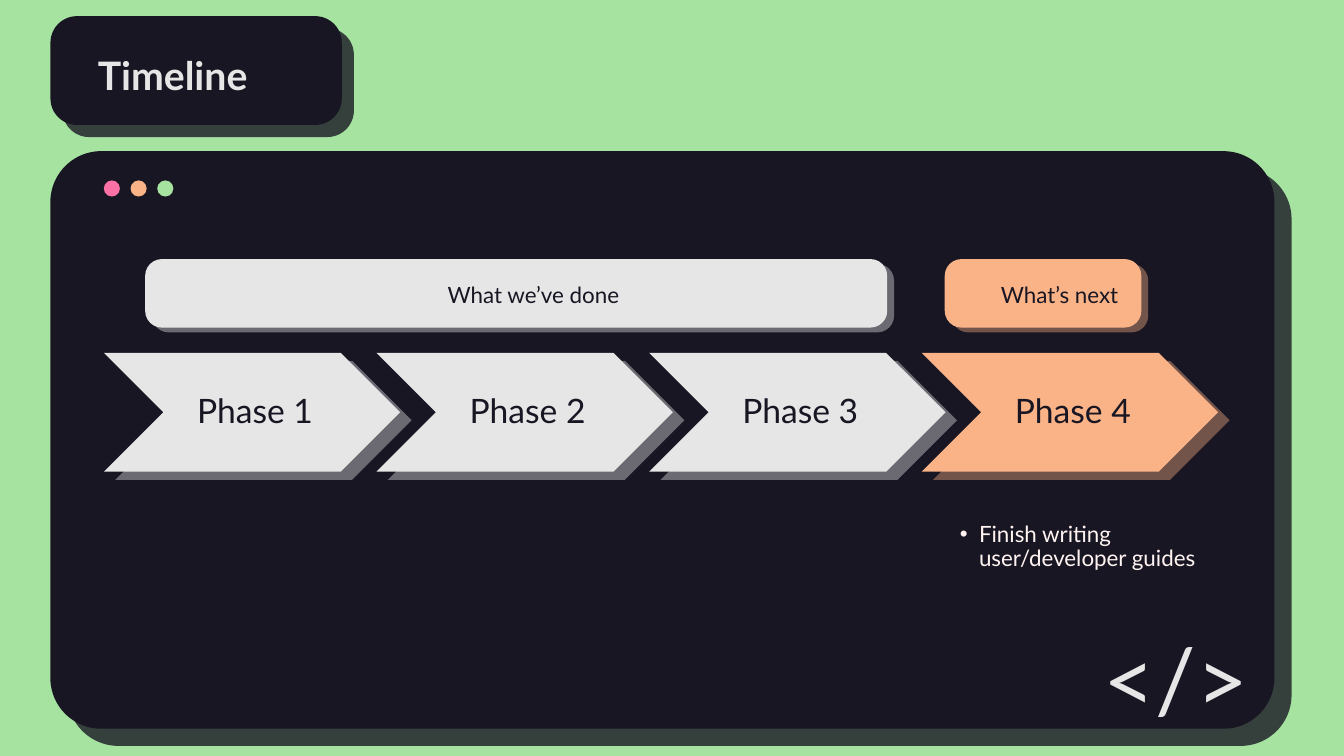
from dataclasses import dataclass
import lxml.etree
import pptx
import pptx.dml.color
import pptx.enum.shapes
import pptx.enum.text
import pptx.oxml
import pptx.oxml.ns
import pptx.util

Inches = pptx.util.Inches
Pt = pptx.util.Pt
Kind = pptx.enum.shapes.MSO_SHAPE
Align = pptx.enum.text.PP_ALIGN
Anchor = pptx.enum.text.MSO_ANCHOR
qn = pptx.oxml.ns.qn

DARK, LIGHT, PEACH, GREEN, PINK, CREAM = (
    "191623", "E7E6E6", "FAB387", "A6E3A1", "FB71A6", "FFF4F2")


@dataclass
class Box:
    left: float
    top: float
    width: float
    height: float


@dataclass
class Panel:
    box: Box
    shift: float
    round: float


@dataclass
class Banner:
    box: Box
    label: Box
    text: str
    color: str


@dataclass
class Phase:
    text: str
    color: str


PANELS = [
    Panel(Box(0.5, 1.5, 12.14, 5.73), 0.17, 0.088),
    Panel(Box(0.5, 0.16, 2.89, 1.08), 0.12, 0.244),
]
DOTS = [PINK, PEACH, GREEN]
PHASES = [Phase(f"Phase {n}", PEACH if n == 4 else LIGHT) for n in range(1, 5)]
BANNERS = [
    Banner(Box(1.44, 2.57, 7.36, 0.68), Box(3.99, 2.74, 2.25, 0.37), "What we’ve done", LIGHT),
    Banner(Box(9.37, 2.57, 1.95, 0.68), Box(9.44, 2.74, 1.75, 0.37), "What’s next", PEACH),
]


def paint(color, code: str) -> None:
    color.rgb = pptx.dml.color.RGBColor.from_string(code)


def place(shape, box: Box) -> None:
    shape.left, shape.top = Inches(box.left), Inches(box.top)
    shape.width, shape.height = Inches(box.width), Inches(box.height)


def draw(slide, kind, box: Box, code: str, round: float | None = None,
         alpha: int = 100, drop: int = 0):
    shape = slide.shapes.add_shape(kind, 0, 0, 0, 0)
    place(shape, box)
    shape.shadow.inherit = False
    shape.fill.solid()
    paint(shape.fill.fore_color, code)
    shape.line.fill.background()
    if round is not None:
        shape.adjustments[0] = round
    props = shape.element.spPr
    if alpha < 100:
        tint = props.find(qn("a:solidFill")).find(qn("a:srgbClr"))
        lxml.etree.SubElement(tint, qn("a:alpha"), val=str(alpha * 1000))
    if drop:
        glow = lxml.etree.SubElement(
            props.find(qn("a:effectLst")), qn("a:outerShdw"), blurRad="0",
            dist=str(Pt(drop)), dir=str(35 * 60000), algn="tl", rotWithShape="0")
        tint = lxml.etree.SubElement(glow, qn("a:srgbClr"), val=code)
        lxml.etree.SubElement(tint, qn("a:alpha"), val="40000")
    return shape


def write(shape, box: Box, text: str, size: int, code: str, align=Align.LEFT,
          anchor=Anchor.TOP, pad=(0.1, 0.05, 0.1, 0.05), wrap: bool = True,
          lead: float = 1.0, bold: bool = False, bullet: bool = False) -> None:
    place(shape, box)
    frame = shape.text_frame
    frame.text = text
    frame.word_wrap = wrap
    frame.auto_size = pptx.enum.text.MSO_AUTO_SIZE.NONE
    frame.vertical_anchor = anchor
    (frame.margin_left, frame.margin_top,
     frame.margin_right, frame.margin_bottom) = map(Inches, pad)
    para = frame.paragraphs[0]
    para.alignment = align
    para.line_spacing = lead
    para.space_before = Pt(0)
    if bullet:
        props = para._p.get_or_add_pPr()
        props.set("marL", str(Inches(0.19)))
        props.set("indent", str(Inches(-0.19)))
        lxml.etree.SubElement(props, qn("a:buChar"), char="•")
    font = para.font
    font.name, font.size, font.bold = "Lato", Pt(size), bold
    paint(font.color, code)


def label(slide, *args, **opts) -> None:
    write(slide.shapes.add_textbox(0, 0, 0, 0), *args, **opts)


def raise_up(shape) -> None:
    shape.element.getparent().append(shape.element)


def main() -> None:
    deck = pptx.Presentation()
    deck.slide_width, deck.slide_height = Inches(13.33), Inches(7.5)
    slide = deck.slides.add_slide(deck.slide_layouts[1])
    slide.background.fill.solid()
    paint(slide.background.fill.fore_color, GREEN)

    for panel in PANELS:
        box = panel.box
        back = Box(box.left + panel.shift, box.top + panel.shift, box.width, box.height)
        draw(slide, Kind.ROUNDED_RECTANGLE, back, DARK, panel.round, alpha=80)
        draw(slide, Kind.ROUNDED_RECTANGLE, box, DARK, panel.round)

    title, body = slide.shapes.title, slide.placeholders[1]
    raise_up(title)
    write(title, Box(0.87, 0.46, 2.15, 0.57), "Timeline", 28, LIGHT, wrap=False, bold=True)

    for i, code in enumerate(DOTS):
        draw(slide, Kind.OVAL, Box(1.03 + i * 0.265, 1.79, 0.16, 0.16), code)

    label(slide, Box(10.48, 6.14, 2.37, 1.18), "</>", 64, LIGHT, Align.CENTER)

    for i, phase in enumerate(PHASES):
        left = 1.03 + i * 2.704
        draw(slide, Kind.CHEVRON, Box(left, 3.5, 2.94, 1.18), phase.color, drop=10)
        label(slide, Box(left + 0.59, 3.5, 1.76, 1.18), phase.text, 24, DARK,
              Align.CENTER, Anchor.MIDDLE, (0.1, 0.04, 0.04, 0.04), lead=0.9)

    raise_up(body)
    write(body, Box(9.52, 5.19, 2.35, 1.28), "Finish writing user/developer guides",
          16, CREAM, pad=(0, 0, 0, 0), lead=0.9, bullet=True)

    for item in BANNERS:
        draw(slide, Kind.ROUNDED_RECTANGLE, item.box, item.color, 0.244, drop=6)
        label(slide, item.label, item.text, 16, DARK, Align.RIGHT)

    deck.save("out.pptx")


if __name__ == "__main__":
    main()
